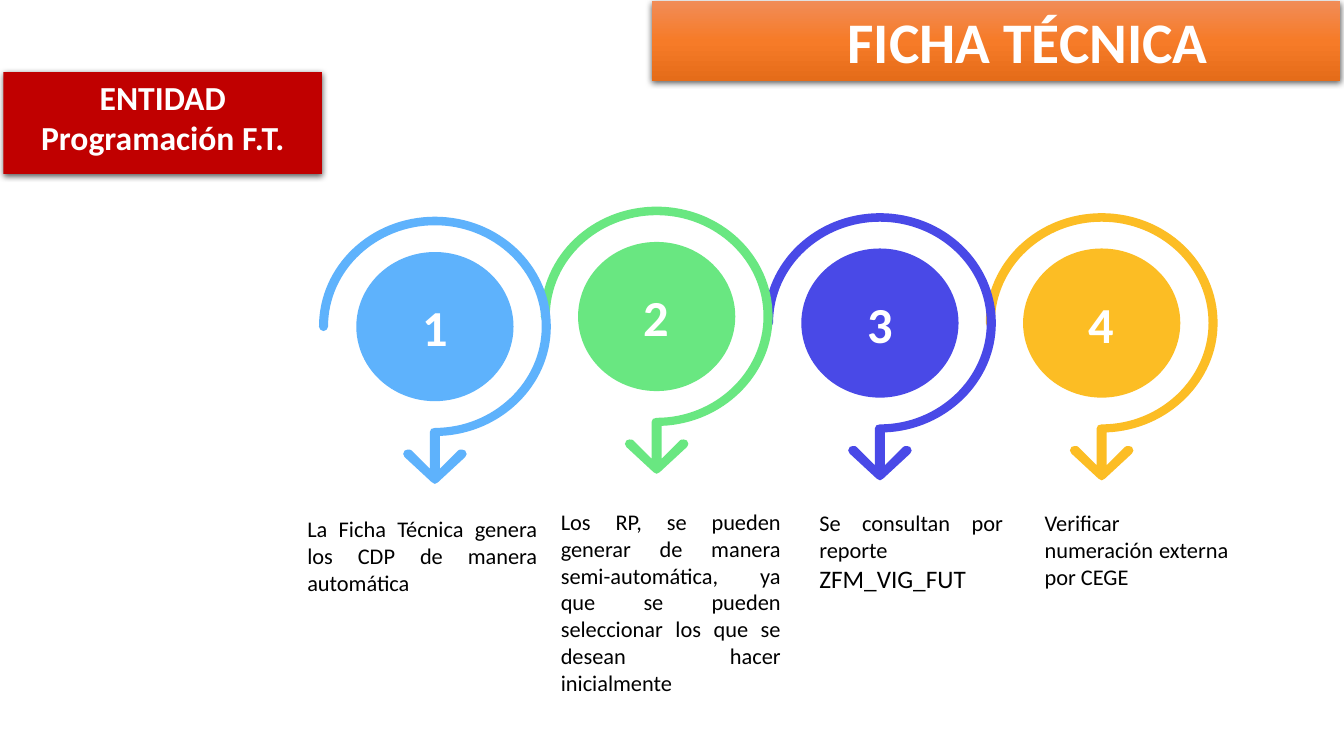
from copy import deepcopy

from lxml import etree
from pptx import Presentation
from pptx.dml.color import RGBColor
from pptx.enum.shapes import MSO_SHAPE
from pptx.enum.text import MSO_ANCHOR, PP_ALIGN
from pptx.oxml.ns import qn
from pptx.util import Inches, Pt

RECT, OVAL = MSO_SHAPE.RECTANGLE, MSO_SHAPE.OVAL
TOP, MIDDLE = MSO_ANCHOR.TOP, MSO_ANCHOR.MIDDLE
CENTER, JUSTIFY = PP_ALIGN.CENTER, PP_ALIGN.JUSTIFY
COLORS = {
    "white": "FFFFFF", "black": "000000", "red": "C00000",
    "blue": "5EB2FC", "green": "69E781", "violet": "4949E7", "gold": "FCBD24",
    "light": "F18C57", "orange": "F67B28", "dark": "E56C19",
}
RGB = {name: RGBColor.from_string(code) for name, code in COLORS.items()}

deck = Presentation()
deck.slide_width, deck.slide_height = Inches(40 / 3), Inches(7.5)
CELL = deck.slide_height / 750  # the slide is a grid of square cells, 750 rows high
shapes = deck.slides.add_slide(deck.slide_layouts[6]).shapes


def grid(*cells):
    """Turn grid columns and rows into slide lengths."""
    return [round(cell * CELL) for cell in cells]


def write(frame, text, size, color, align, bold=False):
    """Fill a frame with one paragraph per line, all in one style."""
    frame.word_wrap = True
    frame.text = text
    for para in frame.paragraphs:
        para.alignment = align
        font = para.font
        font.name, font.size, font.bold = "Calibri", Pt(size), bold
        font.color.rgb = RGB[color]


# Title and entity banners
banners = [
    ((647, 1, 682.5, 79), "FICHA TÉCNICA", 41, 73),
    ((3.5, 71.5, 316, 101), "ENTIDAD\nProgramación F.T.", 24, 10),
]
for box, text, size, indent in banners:
    banner = shapes.add_shape(RECT, *grid(*box))
    banner.line.fill.background()
    banner.fill.solid()
    banner.fill.fore_color.rgb = RGB["red"]
    frame = banner.text_frame
    write(frame, text, size, "white", CENTER, True)
    frame.vertical_anchor = TOP
    frame.margin_left = grid(indent)[0]
    banner.shadow.inherit = False
    effects = banner._element.spPr.find(qn("a:effectLst"))
    shade = etree.SubElement(effects, qn("a:outerShdw"), blurRad="57150",
                             dist="19050", dir="5400000", algn="ctr", rotWithShape="0")
    tint = etree.SubElement(shade, qn("a:srgbClr"), val=COLORS["black"])
    etree.SubElement(tint, qn("a:alpha"), val="63000")

title = shapes[0]
title.fill.gradient()
title.fill.gradient_angle = 270
stops = title._element.spPr.find(".//" + qn("a:gsLst"))
stops.append(deepcopy(stops[-1]))
for stop, name, place in zip(title.fill.gradient_stops,
                             ("light", "orange", "dark"), (0, 0.5, 1)):
    stop.color.rgb, stop.position = RGB[name], place

# Swirl outline around (0, 0): one point is a straight piece, three are a curve
START = (0, -109)
swirl = [
    [(-64, -109), (-115, -60), (-115, 0)],
    [(-115, 2), (-113, 4.5), (-110.5, 4.5)],
    [(-108, 4.5), (-106, 2), (-106, 0)],
    [(-106, -56), (-58, -100.5), (0, -100.5)],
    [(58, -100.5), (106, -56), (106, 0)],
    [(106, 55), (58, 100.5), (0, 100.5)],
    [(-3, 100.5), (-5, 102), (-5, 104.5)],
    [(-5, 141)],
    [(-23, 123)],
    [(-24, 122), (-25, 122), (-27, 122)],
    [(-28, 122), (-29, 122), (-30, 123)],
    [(-32, 125), (-32, 128), (-30, 129.5)],
    [(-3, 154.5)],
    [(-2, 155.5), (-1, 156), (0, 156)],
    [(1, 156), (2, 155.5), (3, 154.5)],
    [(30, 129.5)],
    [(32, 128), (32, 125), (30, 123)],
    [(29, 122), (28, 122), (27, 122)],
    [(25, 122), (24, 122), (23, 123)],
    [(5, 141)],
    [(5, 108.5)],
    [(66, 106), (115, 58), (115, 0)],
    [(115, -60), (64, -109), START],
]

# Steps from back to front: number, color, centre column and row
steps = [("4", "gold", 1093, 320.5), ("3", "violet", 873, 320.5),
         ("2", "green", 651.5, 314), ("1", "blue", 431.5, 324)]
for digit, color, col, row in steps:
    pen = shapes.build_freeform(*grid(col + START[0], row + START[1]))
    pen.add_line_segments([grid(col + x, row + y) for piece in swirl for x, y in piece])
    ring = pen.convert_to_shape()
    lines = iter(ring._element.spPr.findall(".//" + qn("a:lnTo")))
    for piece in swirl:
        curve = next(lines)
        if len(piece) == 3:
            curve.tag = qn("a:cubicBezTo")
            for _ in range(2):
                spare = next(lines)
                curve.append(spare[0])
                spare.getparent().remove(spare)
    disc = shapes.add_shape(OVAL, *grid(col - 78, row - 74, 156, 148))
    for part in (ring, disc):
        part.shadow.inherit = False
        part.line.fill.background()
        part.fill.solid()
        part.fill.fore_color.rgb = RGB[color]
    write(disc.text_frame, digit, 36, "white", CENTER, True)
    disc.text_frame.vertical_anchor = MIDDLE

# Captions under the steps
captions = [
    ((295, 511, 248, 81), MIDDLE, "La Ficha Técnica genera los CDP de manera automática"),
    ((546.5, 499, 238, 199), TOP, "Los RP, se pueden generar de manera semi-automática, "
     "ya que se pueden seleccionar los que se desean hacer inicialmente"),
    ((803, 500.5, 202, 94), TOP, "Se consultan por reporte "),
    ((1026.5, 500.5, 202, 91), TOP, "Verificar numeración externa por CEGE"),
]
for box, anchor, text in captions:
    frame = shapes.add_textbox(*grid(*box)).text_frame
    write(frame, text, 16, "black", JUSTIFY)
    frame.vertical_anchor = anchor
    if text.endswith(" "):
        code = frame.paragraphs[0].add_run()
        code.text, code.font.size = "ZFM_VIG_FUT", Pt(18)

deck.save("out.pptx")
